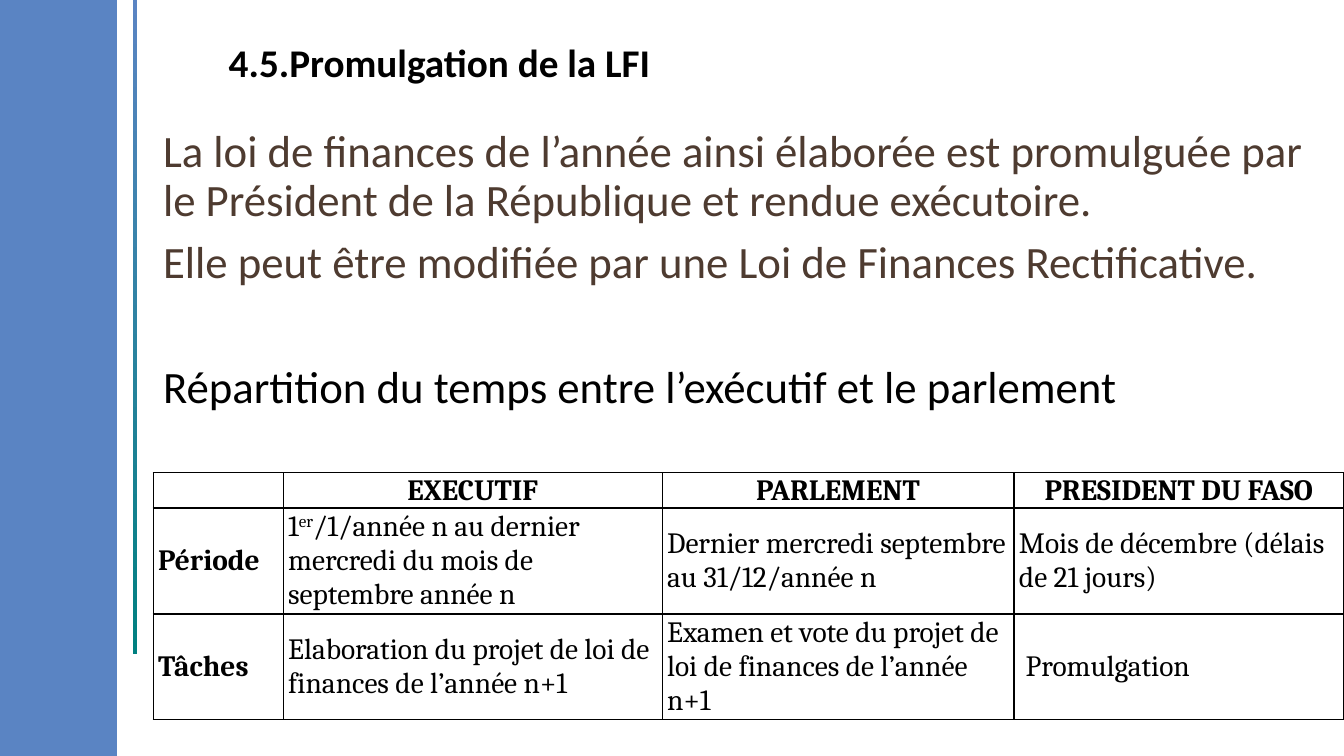
from lxml.etree import SubElement
from pptx import Presentation
from pptx.dml.color import RGBColor
from pptx.enum.shapes import MSO_SHAPE
from pptx.enum.text import MSO_ANCHOR, MSO_AUTO_SIZE, PP_ALIGN
from pptx.oxml.ns import qn
from pptx.util import Pt

COLORS = {"blue": "5A84C3", "teal": "008080", "brown": "4E3B30", "black": "000000"}


class SlideBuilder:
    heading_font = "Calibri"
    table_font = "Cambria"

    def __init__(self, slide):
        self.slide = slide

    def color(self, name):
        return RGBColor.from_string(COLORS[name])

    def run(self, paragraph, text, size, font, color="black", bold=False, raised=False):
        run = paragraph.add_run()
        run.text = text
        run.font.size = Pt(size)
        run.font.name = font
        run.font.bold = bold
        run.font.color.rgb = self.color(color)
        if raised:
            run._r.get_or_add_rPr().set("baseline", "30000")

    def bar(self, left, width, height, *colors):
        bar = self.slide.shapes.add_shape(
            MSO_SHAPE.RECTANGLE, Pt(left), 0, Pt(width), Pt(height))
        bar.shadow.inherit = False
        bar.line.fill.background()
        if len(colors) == 1:
            bar.fill.solid()
            bar.fill.fore_color.rgb = self.color(colors[0])
        else:
            bar.fill.gradient()
            bar.fill.gradient_angle = 90
            for stop, name in zip(bar.fill.gradient_stops, colors):
                stop.color.rgb = self.color(name)

    def title(self, text, left, top, width, height):
        title = self.slide.shapes.title
        title.left, title.top, title.width, title.height = map(Pt, (left, top, width, height))
        frame = title.text_frame
        frame.auto_size = MSO_AUTO_SIZE.NONE
        frame.word_wrap = True
        frame.vertical_anchor = MSO_ANCHOR.MIDDLE
        paragraph = frame.paragraphs[0]
        paragraph.alignment = PP_ALIGN.JUSTIFY
        paragraph.line_spacing = 0.9
        self.run(paragraph, text, 28, self.heading_font, bold=True)

    def body(self, paragraphs, left, top, width, height):
        frame = self.slide.shapes.add_textbox(*map(Pt, (left, top, width, height))).text_frame
        frame.word_wrap = True
        for index, (text, color, space_before) in enumerate(paragraphs):
            paragraph = frame.add_paragraph() if index else frame.paragraphs[0]
            paragraph.line_spacing = 0.9
            paragraph.space_before = Pt(space_before)
            self.run(paragraph, text, 32, self.heading_font, color)

    def borders(self, cell):
        properties = cell._tc.get_or_add_tcPr()
        for side in ("a:lnL", "a:lnR", "a:lnT", "a:lnB"):
            line = SubElement(properties, qn(side), w=str(Pt(1)))
            fill = SubElement(line, qn("a:solidFill"))
            SubElement(fill, qn("a:srgbClr"), val=COLORS["black"])

    def table(self, rows, left, top, widths, heights):
        table = self.slide.shapes.add_table(
            len(rows), len(widths), Pt(left), Pt(top),
            Pt(sum(widths)), Pt(sum(heights))).table
        table.first_row = table.horz_banding = False
        for column, width in zip(table.columns, widths):
            column.width = Pt(width)
        for row, height in zip(table.rows, heights):
            row.height = Pt(height)
        for row_index, row in enumerate(rows):
            for column_index, pieces in enumerate(row):
                cell = table.cell(row_index, column_index)
                cell.margin_left = cell.margin_right = Pt(3.6)
                cell.margin_top = cell.margin_bottom = 0
                cell.vertical_anchor = MSO_ANCHOR.MIDDLE
                self.borders(cell)
                cell.fill.background()
                paragraph = cell.text_frame.paragraphs[0]
                paragraph.alignment = PP_ALIGN.LEFT if row_index else PP_ALIGN.CENTER
                is_heading = row_index == 0 or column_index == 0
                for piece_index, text in enumerate(pieces):
                    self.run(paragraph, text, 21, self.table_font,
                             bold=is_heading, raised=piece_index == 1)
        return table


def main():
    presentation = Presentation()
    presentation.slide_width, presentation.slide_height = Pt(960), Pt(540)
    builder = SlideBuilder(presentation.slides.add_slide(presentation.slide_layouts[5]))

    builder.bar(0, 83.5, 540, "blue")
    builder.bar(95, 3, 467, "teal", "blue")
    builder.title("4.5.Promulgation de la LFI", 156.2, 21.6, 648, 49.7)
    builder.body([
        ("La loi de finances de l’année ainsi élaborée est promulguée par le Président "
         "de la République et rendue exécutoire.", "brown", 0),
        ("Elle peut être modifiée par une Loi de Finances Rectificative.", "brown", 10),
        ("Répartition du temps entre l’exécutif et le parlement", "black", 55),
    ], 109.4, 88.6, 850.3, 225)

    schedule = builder.table([
        [[], ["EXECUTIF"], ["PARLEMENT"], ["PRESIDENT DU FASO"]],
        [["Période"],
         ["1", "er", "/1/année n au dernier mercredi du mois de septembre année n"],
         ["Dernier mercredi septembre au 31/12/année n"],
         ["Mois de décembre (délais de 21 jours)"]],
        [["Tâches"],
         ["Elaboration du projet de loi de finances de l’année n+1"],
         ["Examen et vote du projet de loi de finances de l’année n+1"],
         ["Promulgation"]],
    ], 109.4, 337.7, [92.9, 270.7, 251.3, 235.4], [24, 73, 73])
    schedule.cell(2, 3).margin_left = Pt(8.4)

    presentation.save("out.pptx")


if __name__ == "__main__":
    main()
